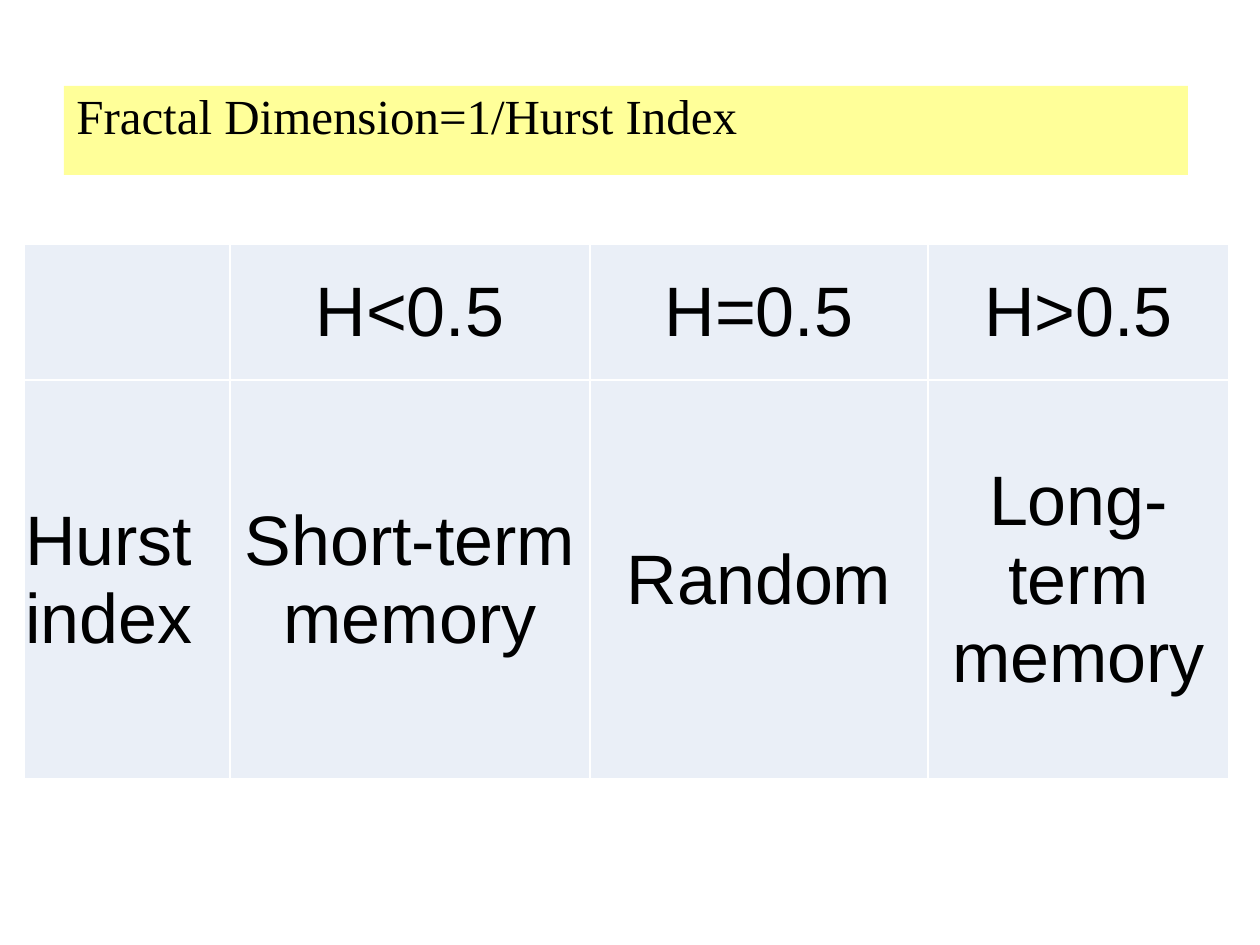
from lxml import etree
from pptx import Presentation, util as u
from pptx.dml.color import RGBColor
from pptx.enum import shapes, text
from pptx.oxml.ns import qn

# Content
TITLE = "Fractal Dimension=1/Hurst Index"
ROWS = [
    ["", "H<0.5", "H=0.5", "H>0.5"],
    ["Hurst index", "Short-term memory", "Random", "Long-term memory"],
]

# Layout in px
SLIDE = (1260, 945)
TITLE_BOX = (64, 86, 1124, 89)
TABLE_CORNER = (24, 244)
COLUMN_WIDTHS = [206, 360, 338, 301]
ROW_HEIGHTS = [136, 399]
TITLE_INDENT = 48

COLORS = {"title": "FFFF99", "cell": "EAEFF7", "border": "FFFFFF", "text": "000000"}
TITLE_FONT = {"name": "Times New Roman", "size": u.Pt(28)}
CELL_FONT = {"name": "Arial", "size": u.Pt(40)}


def px(length):
    return round(length * 914400 / 126)


def color(name):
    return RGBColor.from_string(COLORS[name])


def apply(target, values):
    for name, value in values.items():
        setattr(target, name, value)


def fill(item, name):
    item.fill.solid()
    item.fill.fore_color.rgb = color(name)


def write(para, words, font):
    span = para.add_run()
    span.text = words
    apply(span.font, font)
    span.font.color.rgb = color("text")


def add_borders(cell):
    props = cell._tc.get_or_add_tcPr()
    for index, side in enumerate(("lnL", "lnR", "lnT", "lnB")):
        line = etree.Element(qn("a:" + side), w=str(u.Pt(1)))
        solid = etree.SubElement(line, qn("a:solidFill"))
        etree.SubElement(solid, qn("a:srgbClr"), val=COLORS["border"])
        props.insert(index, line)


deck = Presentation()
deck.slide_width, deck.slide_height = map(px, SLIDE)
page = deck.slides.add_slide(deck.slide_layouts[6])

# Memory table
frame = page.shapes.add_table(
    len(ROWS), len(COLUMN_WIDTHS), *map(px, TABLE_CORNER),
    px(sum(COLUMN_WIDTHS)), px(sum(ROW_HEIGHTS)))
table = frame.table
apply(table, {"first_row": False, "horz_banding": False})
for column, width in zip(table.columns, COLUMN_WIDTHS):
    column.width = px(width)
for row, height in zip(table.rows, ROW_HEIGHTS):
    row.height = px(height)

for r, words_in_row in enumerate(ROWS):
    for c, words in enumerate(words_in_row):
        cell = table.cell(r, c)
        apply(cell, {"margin_left": px(1), "margin_right": px(1), "margin_top": px(1),
                     "margin_bottom": 0, "vertical_anchor": text.MSO_ANCHOR.MIDDLE})
        fill(cell, "cell")
        add_borders(cell)
        if words:
            para = cell.text_frame.paragraphs[0]
            para.alignment = text.PP_ALIGN.CENTER if c else text.PP_ALIGN.LEFT
            write(para, words, CELL_FONT)

# Title band
box = page.shapes.add_shape(shapes.MSO_SHAPE.RECTANGLE, *map(px, TITLE_BOX))
box.shadow.inherit = False
fill(box, "title")
box.line.fill.background()
apply(box.text_frame, {"word_wrap": True, "vertical_anchor": text.MSO_ANCHOR.TOP})
para = box.text_frame.paragraphs[0]
apply(para, {"alignment": text.PP_ALIGN.LEFT, "line_spacing": 0.9, "space_before": u.Pt(5.6)})
apply_indent = {"marL": px(TITLE_INDENT), "indent": -px(TITLE_INDENT)}
for name, value in apply_indent.items():
    para._p.get_or_add_pPr().set(name, str(value))
write(para, TITLE, TITLE_FONT)

deck.save("out.pptx")
